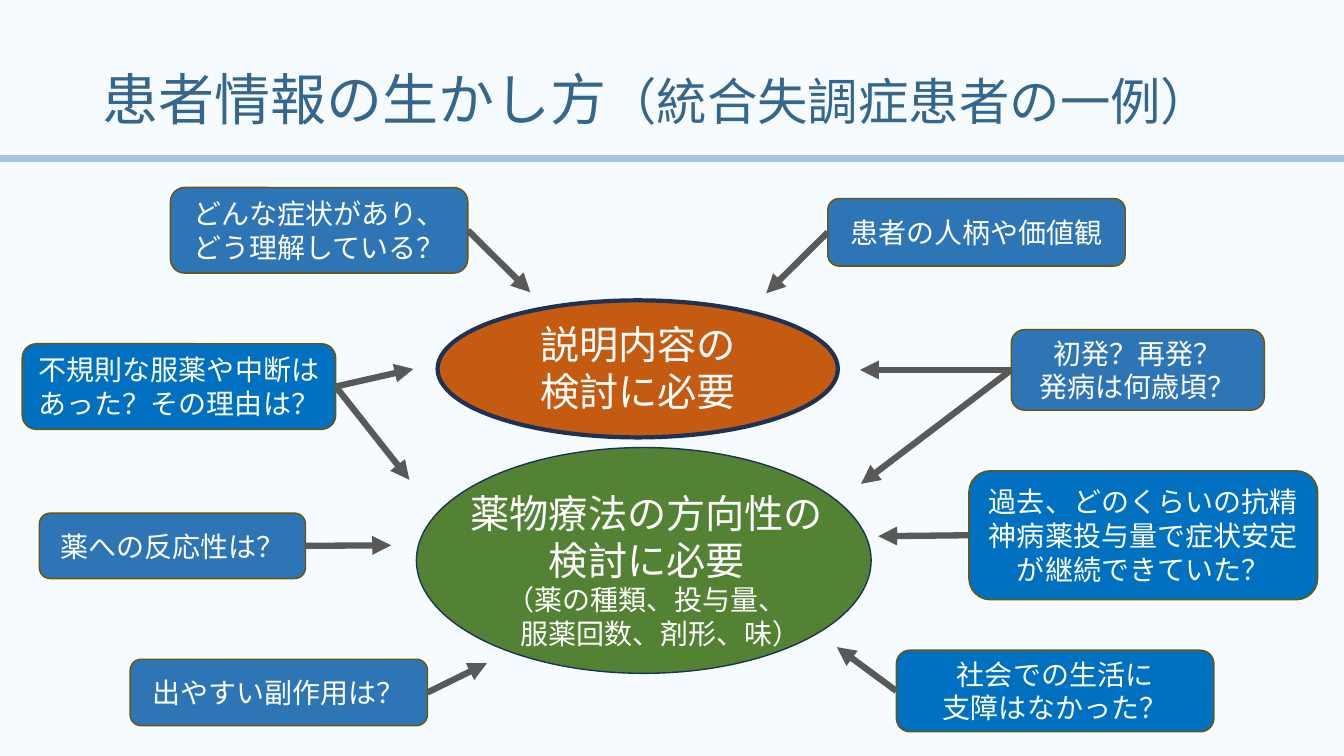
from lxml import etree
from pptx import Presentation
from pptx.dml.color import RGBColor
from pptx.enum.shapes import MSO_CONNECTOR as LINE, MSO_SHAPE as SHAPE
from pptx.enum.text import MSO_ANCHOR as ANCHOR, MSO_AUTO_SIZE as FIT, PP_ALIGN as ALIGN
from pptx.oxml.ns import qn
from pptx.util import Pt

PX = 9144  # 100 px to the inch
WIDE, HIGH = 1333, 750
FONT = "Noto Sans CJK JP"

PALE = RGBColor(0xF5, 0xFB, 0xFE)
TITLE = RGBColor(0x35, 0x66, 0x8D)
RULE = RGBColor(0xAB, 0xC0, 0xE4)
STEEL = RGBColor(0x2E, 0x75, 0xB6)
BLUE = RGBColor(0x00, 0x70, 0xC0)
BROWN = RGBColor(0x70, 0x54, 0x00)
GREY = RGBColor(0x59, 0x59, 0x59)
NAVY = RGBColor(0x1E, 0x32, 0x56)
ORANGE = RGBColor(0xC5, 0x5A, 0x11)
GREEN = RGBColor(0x54, 0x82, 0x35)
WHITE = RGBColor(0xFF, 0xFF, 0xFF)

LEFT, RIGHT = 1, 3  # connection sites

# box, fill, text, side the arrows leave from, arrow tips
NOTES = [
    ((169, 186, 295, 85), STEEL, "どんな症状があり、どう理解している？", RIGHT, [(526, 290)]),
    ((22, 341, 311, 85), BLUE, "不規則な服薬や中断はあった？その理由は？", RIGHT,
     [(410, 366), (406, 476)]),
    ((39, 509, 264, 65), STEEL, "薬への反応性は？", RIGHT, [(388, 541)]),
    ((129, 654, 295, 66), STEEL, "出やすい副作用は？", RIGHT, [(483, 658)]),
    ((821, 197, 295, 67), STEEL, "患者の人柄や価値観", LEFT, [(760, 291)]),
    ((1003, 327, 251, 80), STEEL, "初発？再発？\n発病は何歳頃？", LEFT,
     [(853, 367), (854, 480)]),
    ((961, 467, 346, 128), BLUE,
     "過去、どのくらいの抗精神病薬投与量で症状安定が継続できていた？", LEFT, [(871, 532)]),
    ((889, 645, 315, 81), BLUE, "社会での生活に\n支障はなかった？", LEFT, [(830, 642)]),
]


def scale(*sizes):
    return [size * PX for size in sizes]


def style(run, size, color):
    run.font.size = Pt(size)
    run.font.name = FONT
    run.font.color.rgb = color
    etree.SubElement(run.font._element, qn("a:ea"), typeface=FONT)


def write(frame, text, sizes):
    """Fill a frame with centred white text; sizes go line by line."""
    frame.text = text
    for para, size in zip(frame.paragraphs, sizes):
        para.alignment = ALIGN.CENTER
        for run in para.runs:
            style(run, size, WHITE)


def add_form(slide, kind, box, fill, edge, width):
    form = slide.shapes.add_shape(kind, *scale(*box))
    form.shadow.inherit = False
    form.fill.solid()
    form.fill.fore_color.rgb = fill
    form.line.color.rgb = edge
    form.line.width = Pt(width)
    return form


def add_line(slide, start, end, color, width):
    line = slide.shapes.add_connector(LINE.STRAIGHT, *scale(*start, *end))
    line.line.color.rgb = color
    line.line.width = Pt(width)
    etree.SubElement(line._element.spPr, qn("a:effectLst"))
    return line


def add_head(slide):
    box = slide.shapes.add_textbox(*scale(92, 29, 1198, 145))
    frame = box.text_frame
    frame.word_wrap = True
    frame.vertical_anchor = ANCHOR.MIDDLE
    para = frame.paragraphs[0]
    para.line_spacing = 0.9
    for text, size in (("患者情報の生かし方", 40), ("（統合失調症患者の一例）", 36)):
        run = para.add_run()
        run.text = text
        style(run, size, TITLE)
    add_line(slide, (0, 157), (WIDE, 157), RULE, 5.25)


def add_note(slide, box, fill, text, side, tips):
    """Draw a rounded box and its arrows."""
    note = add_form(slide, SHAPE.ROUNDED_RECTANGLE, box, fill, BROWN, 1)
    note.text_frame.word_wrap = True
    note.text_frame.vertical_anchor = ANCHOR.MIDDLE
    write(note.text_frame, text, (20, 20))
    left, top, width, height = box
    start = (left + (width if side == RIGHT else 0), top + height // 2)
    for tip in tips:
        arrow = add_line(slide, start, tip, GREY, 4.5)
        arrow.begin_connect(note, side)
        etree.SubElement(arrow.line._get_or_add_ln(), qn("a:tailEnd"), type="triangle")


def add_goal(slide, box, fill, width, area, text, sizes, wrap):
    """Draw an ellipse with a text box over it."""
    add_form(slide, SHAPE.OVAL, box, fill, NAVY, width)
    frame = slide.shapes.add_textbox(*scale(*area)).text_frame
    frame.word_wrap = wrap
    frame.auto_size = FIT.SHAPE_TO_FIT_TEXT
    write(frame, text, sizes)


def main():
    deck = Presentation()
    deck.slide_width, deck.slide_height = scale(WIDE, HIGH)
    slide = deck.slides.add_slide(deck.slide_layouts[6])
    slide.background.fill.solid()
    slide.background.fill.fore_color.rgb = PALE
    add_head(slide)
    for note in NOTES:
        add_note(slide, *note)
    add_goal(slide, (434, 298, 397, 136), ORANGE, 3, (525, 313, 216, 104),
             "説明内容の\n検討に必要", (28, 28), False)
    add_goal(slide, (413, 444, 451, 224), GREEN, 1, (426, 480, 431, 172),
             "薬物療法の方向性の\n検討に必要\n（薬の種類、投与量、\n　服薬回数、剤形、味）",
             (28, 28, 20, 20), True)
    deck.save("out.pptx")


if __name__ == "__main__":
    main()
